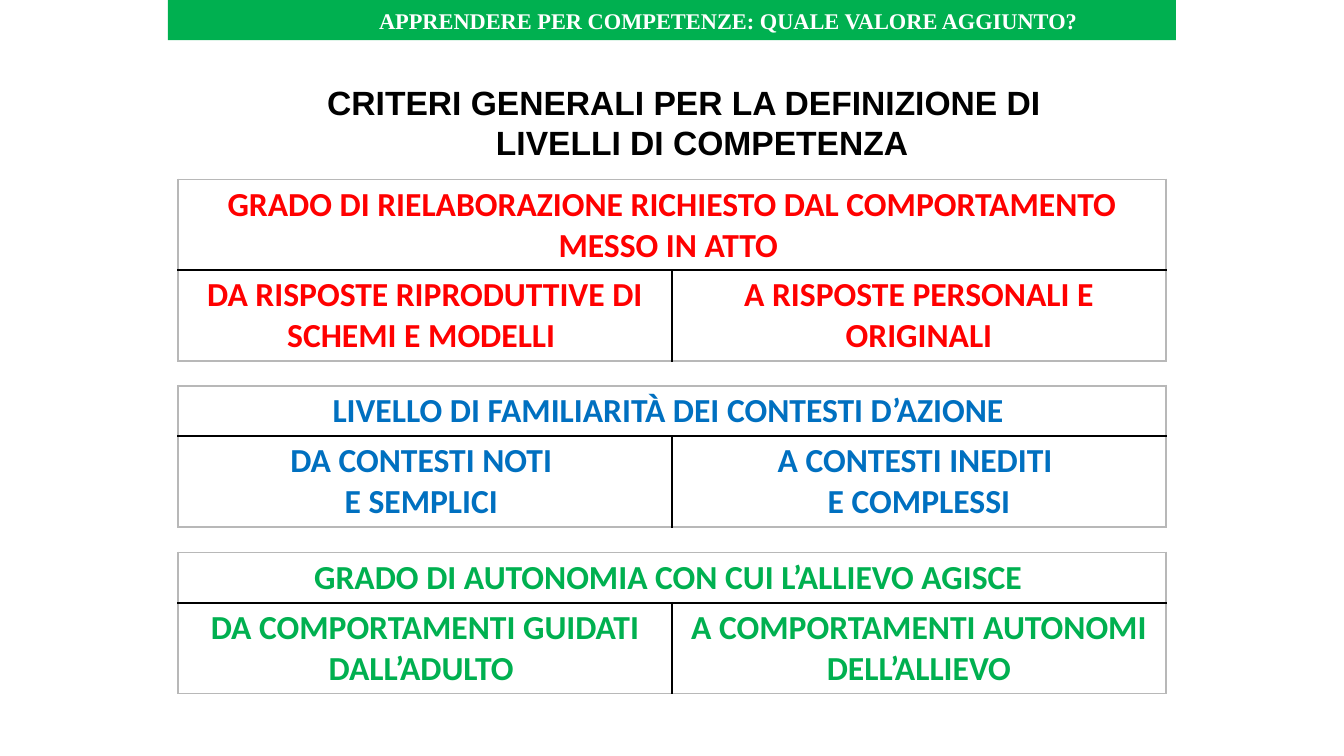
from dataclasses import dataclass

from lxml.etree import SubElement
from pptx import Presentation
from pptx.dml.color import RGBColor
from pptx.enum.shapes import MSO_SHAPE as Shape
from pptx.enum.text import PP_ALIGN as Align
from pptx.oxml.ns import qn
from pptx.util import Emu, Pt

SCALE = 4572


@dataclass(frozen=True)
class Theme:
    black: str = "000000"
    white: str = "FFFFFF"
    red: str = "FF0000"
    blue: str = "0070C0"
    green: str = "00B050"
    frame: str = "B8B8B8"
    body: int = 18
    header: int = 12
    rule: int = 1


@dataclass(frozen=True)
class Criterion:
    top: int
    title_height: int
    color: str
    title: str
    start: str
    end: str


T = Theme()
LEFT, COLUMN, LEVEL_HEIGHT = 265, 735, 135
CRITERIA = (
    Criterion(267, 135, T.red,
              "GRADO DI RIELABORAZIONE RICHIESTO DAL COMPORTAMENTO MESSO IN ATTO ",
              "DA RISPOSTE RIPRODUTTIVE DI SCHEMI E MODELLI ",
              "A RISPOSTE PERSONALI E ORIGINALI"),
    Criterion(574, 75, T.blue,
              "LIVELLO DI FAMILIARITÀ DEI CONTESTI D’AZIONE ",
              "DA CONTESTI NOTI \nE SEMPLICI ",
              "A CONTESTI INEDITI \nE COMPLESSI"),
    Criterion(822, 75, T.green,
              "GRADO DI AUTONOMIA CON CUI L’ALLIEVO AGISCE ",
              "DA COMPORTAMENTI GUIDATI DALL’ADULTO ",
              "A COMPORTAMENTI AUTONOMI DELL’ALLIEVO"),
)


def px(n: int) -> Emu:
    return Emu(n * SCALE)


def write(tf, text: str, *, color: str, font: str, size: int = T.body,
          left: int = 0, right: int = 0, indent: int = 0) -> None:
    tf.word_wrap = True
    tf.text = text
    for p in tf.paragraphs:
        p.alignment = Align.CENTER
        pPr = p._p.get_or_add_pPr()
        for name, value in (("marL", left), ("marR", right), ("indent", indent)):
            pPr.set(name, str(px(value)))
        for r in p.runs:
            r.font.name, r.font.size, r.font.bold = font, Pt(size), True
            r.font.color.rgb = RGBColor.from_string(color)


def border(cell, edge: str, color: str) -> None:
    ln = SubElement(cell._tc.get_or_add_tcPr(), qn(f"a:ln{edge}"), w=str(Pt(T.rule)))
    SubElement(SubElement(ln, qn("a:solidFill")), qn("a:srgbClr"), val=color)


def add_criterion(s, item: Criterion) -> None:
    heights = (item.title_height, LEVEL_HEIGHT)
    frame = s.shapes.add_table(2, 2, px(LEFT), px(item.top),
                               px(2 * COLUMN), px(sum(heights)))
    table = frame.table
    table.first_row = table.horz_banding = False
    for row, height in zip(table.rows, heights):
        row.height = px(height)
    table.cell(0, 0).merge(table.cell(0, 1))
    for r in range(2):
        for c in range(2):
            cell = table.cell(r, c)
            inner = {"L": c == 1 and r == 1, "R": c == 0 and r == 1,
                     "T": r == 1, "B": r == 0}
            for edge, is_inner in inner.items():
                border(cell, edge, T.black if is_inner else T.frame)
            cell.fill.background()
            cell.margin_left = cell.margin_right = px(15)
            cell.margin_top, cell.margin_bottom = px(7), px(6)
    texts = {(0, 0): item.title, (1, 0): item.start, (1, 1): item.end}
    for place, text in texts.items():
        write(table.cell(*place).text_frame, text, color=item.color, font="Calibri")


def add_title(s) -> None:
    sp = s.shapes.add_textbox(px(298), px(112), px(1394), px(142))
    write(sp.text_frame, "CRITERI GENERALI PER LA DEFINIZIONE DI LIVELLI DI COMPETENZA",
          color=T.black, font="Arial", left=150, right=50, indent=-54)


def add_header(s) -> None:
    sp = s.shapes.add_shape(Shape.RECTANGLE, px(250), px(0), px(1500), px(60))
    sp.shadow.inherit = False
    sp.fill.solid()
    sp.fill.fore_color.rgb = RGBColor.from_string(T.green)
    sp.line.fill.background()
    write(sp.text_frame, "APPRENDERE PER COMPETENZE: QUALE VALORE AGGIUNTO?",
          color=T.white, font="Times New Roman", size=T.header, left=168)


def main() -> None:
    prs = Presentation()
    prs.slide_width, prs.slide_height = px(2000), px(1125)
    s = prs.slides.add_slide(prs.slide_layouts[6])
    add_title(s)
    for item in CRITERIA:
        add_criterion(s, item)
    add_header(s)
    prs.save("out.pptx")


if __name__ == "__main__":
    main()
